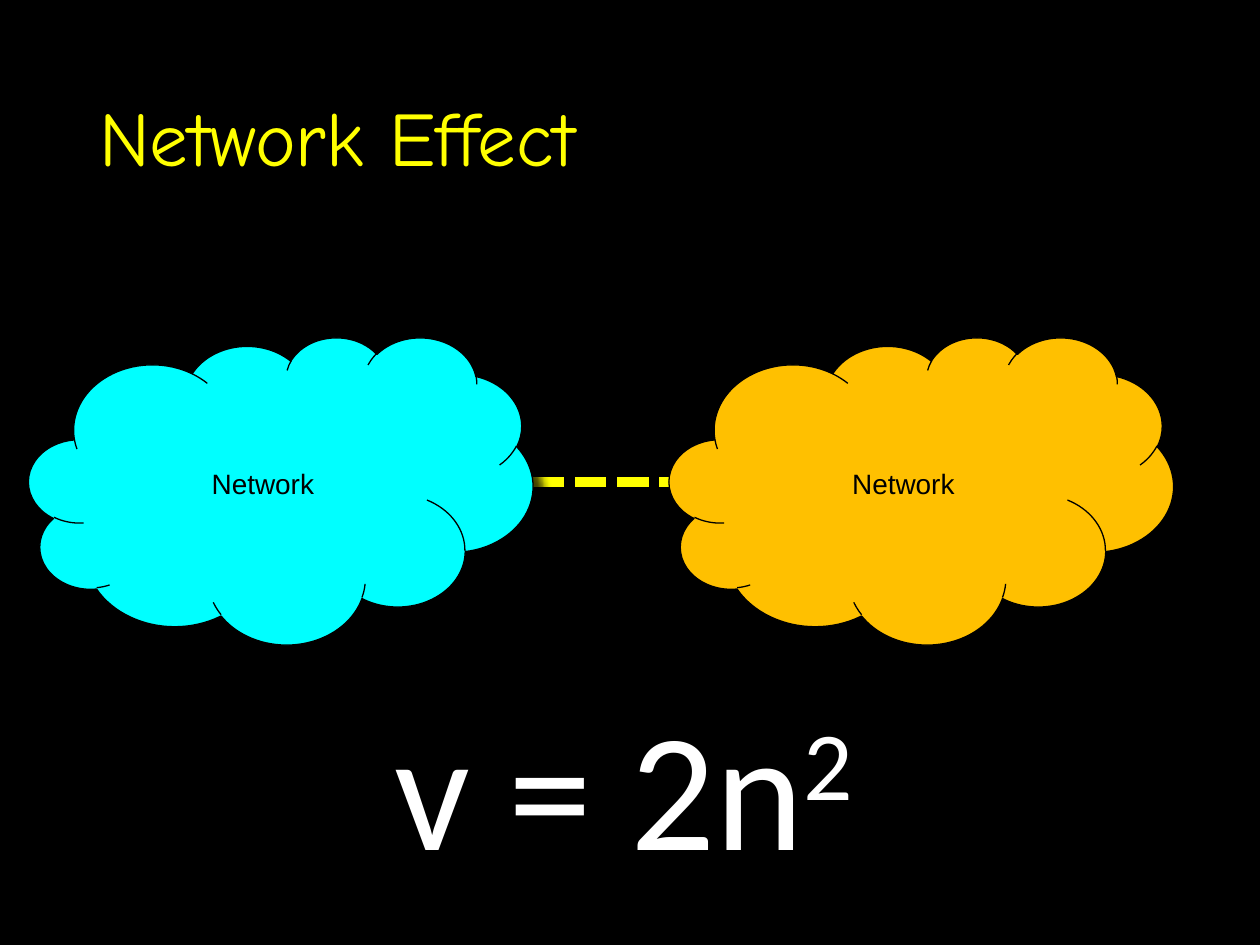
from lxml import etree
from pptx import Presentation
from pptx.dml.color import RGBColor
from pptx.enum.dml import MSO_LINE
from pptx.enum.shapes import MSO_CONNECTOR, MSO_SHAPE
from pptx.enum.text import MSO_ANCHOR, MSO_AUTO_SIZE, PP_ALIGN
from pptx.oxml.ns import qn
from pptx.util import Pt

CLOUD = MSO_SHAPE.CLOUD
STRAIGHT = MSO_CONNECTOR.STRAIGHT
DASH = MSO_LINE.SQUARE_DOT
LEFT, CENTER = PP_ALIGN.LEFT, PP_ALIGN.CENTER
MIDDLE = MSO_ANCHOR.MIDDLE
GROW = MSO_AUTO_SIZE.SHAPE_TO_FIT_TEXT

HUES = {
    "black": "000000",
    "white": "FFFFFF",
    "yellow": "FFFF00",
    "cyan": "00FFFF",
    "gold": "FFC000",
}


def color(name):
    return RGBColor.from_string(HUES[name])


def add_run(para, text, size, font, hue):
    run = para.add_run()
    run.text = text
    run.font.size = Pt(size)
    run.font.name = font
    run.font.color.rgb = color(hue)
    return run


prs = Presentation()
prs.slide_width, prs.slide_height = Pt(720), Pt(540)
slide = prs.slides.add_slide(prs.slide_layouts[5])
slide.background.fill.solid()
slide.background.fill.fore_color.rgb = color("black")
shapes = slide.shapes

title = shapes.title
title.left, title.top, title.width, title.height = Pt(49.5), Pt(28.75), Pt(621), Pt(104.4)
title.text_frame.vertical_anchor = MIDDLE
para = title.text_frame.paragraphs[0]
para.alignment = LEFT
para.line_spacing = 0.9
add_run(para, "Network Effect", 44, "Comic Neue", "yellow")

link = shapes.add_connector(STRAIGHT, Pt(304.5), Pt(275.5), Pt(389), Pt(275.5))
link.line.color.rgb = color("yellow")
link.line.width = Pt(6)
link.line.dash_style = DASH
etree.SubElement(link._element.spPr, qn("a:effectLst"))

for left, hue in ((16.5, "cyan"), (382.5, "gold")):
    cloud = shapes.add_shape(CLOUD, Pt(left), Pt(192.5), Pt(288), Pt(175.5))
    cloud.fill.solid()
    cloud.fill.fore_color.rgb = color(hue)
    cloud.line.color.rgb = color("black")
    cloud.line.width = Pt(0.75)
    cloud.shadow.inherit = False
    effects = cloud._element.spPr.find(qn("a:effectLst"))
    shade = etree.SubElement(effects, qn("a:outerShdw"), blurRad=str(Pt(5)),
                             dist=str(Pt(8.5)), dir="2700000", rotWithShape="0")
    tint = etree.SubElement(shade, qn("a:srgbClr"), val=HUES["black"])
    etree.SubElement(tint, qn("a:alpha"), val="75000")
    cloud.text_frame.vertical_anchor = MIDDLE
    para = cloud.text_frame.paragraphs[0]
    para.alignment = CENTER
    add_run(para, "Network", 16, "Arial", "black")

law = shapes.add_textbox(Pt(218.5), Pt(386.5), Pt(279), Pt(124))
law.text_frame.word_wrap = False
law.text_frame.auto_size = GROW
para = law.text_frame.paragraphs[0]
add_run(para, "v = 2n", 96, "Calibri", "white")
power = add_run(para, "2", 96, "Calibri", "white")
power.font._element.set("baseline", "30000")

prs.save("out.pptx")
